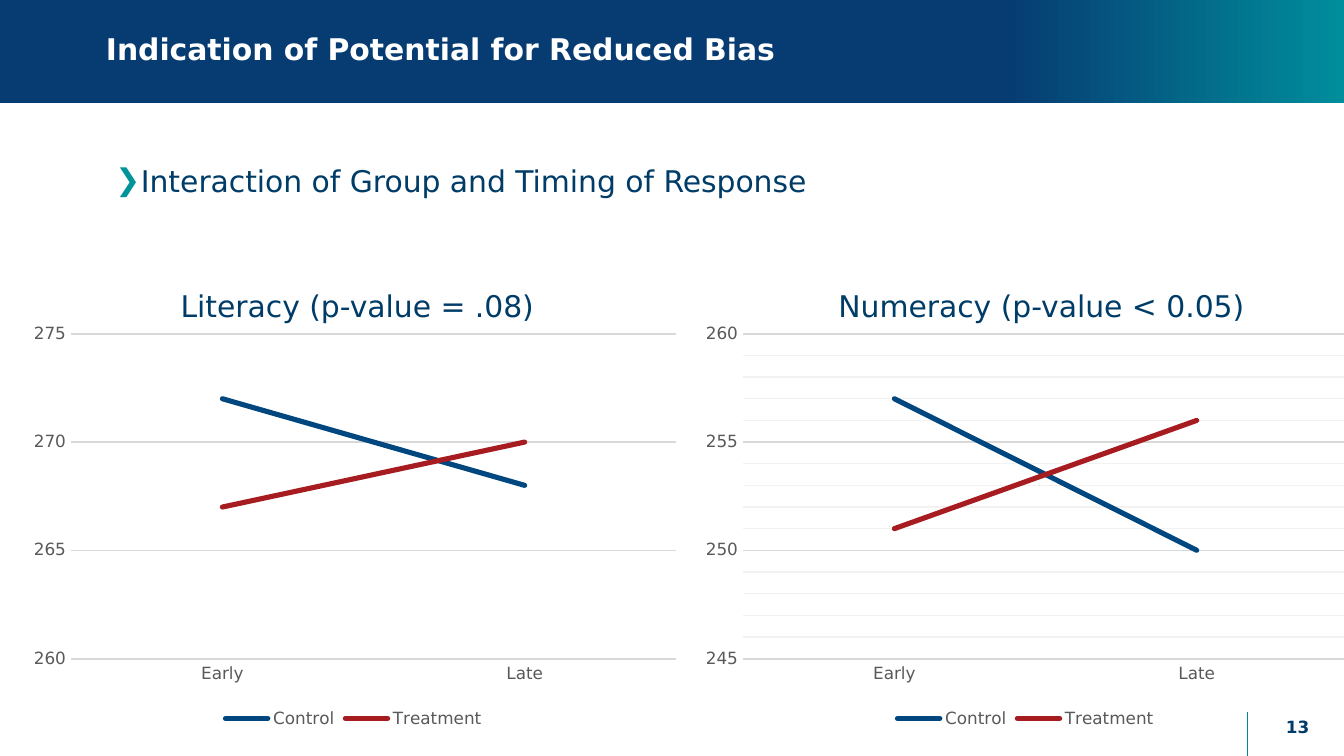
import copy
from dataclasses import dataclass

import pptx
import pptx.chart.data
import pptx.dml.color
import pptx.enum.chart
import pptx.enum.shapes
import pptx.enum.text
import pptx.oxml
import pptx.oxml.ns
import pptx.util

FONT = "DejaVu Sans"
COLOURS = {
    "navy": "073C72", "teal": "008D9C", "divider": "008799", "bullet": "009399",
    "text": "003C68", "white": "FFFFFF", "label": "595959",
    "grid": "D9D9D9", "minor": "F2F2F2", "Control": "00467F", "Treatment": "A71C20",
}
ALIGN = pptx.enum.text.PP_ALIGN
ANCHOR = pptx.enum.text.MSO_ANCHOR
NAMESPACE = pptx.oxml.ns.nsdecls("a")

deck = pptx.Presentation()
deck.slide_width = pptx.util.Inches(10)
deck.slide_height = deck.slide_width * 9 // 16
page = deck.slides.add_slide(deck.slide_layouts[6])


@dataclass
class Area:
    """A place on the page, in percent of its width and height."""
    left: float
    top: float
    width: float
    height: float

    def lengths(self) -> tuple[int, int, int, int]:
        across, down = deck.slide_width / 100, deck.slide_height / 100
        return (round(self.left * across), round(self.top * down),
                round(self.width * across), round(self.height * down))


@dataclass
class Label:
    text: str
    area: Area
    size: float = 16
    colour: str = "text"
    bold: bool = False
    align: ALIGN = ALIGN.LEFT
    anchor: ANCHOR = ANCHOR.TOP
    spacing: float | pptx.util.Pt = 1.0
    bullet: str = ""


@dataclass
class Panel:
    title: str
    left: float
    title_left: float
    low: int
    high: int
    control: tuple[int, int]
    treatment: tuple[int, int]
    minor_grid: bool = False


def rgb(name: str) -> pptx.dml.color.RGBColor:
    return pptx.dml.color.RGBColor.from_string(COLOURS[name])


def style_font(font, size: float, colour: str, bold: bool = False) -> None:
    font.name, font.size, font.bold = FONT, pptx.util.Pt(size), bold
    font.color.rgb = rgb(colour)


def style_line(line, colour: str, width: float) -> None:
    line.color.rgb = rgb(colour)
    line.width = pptx.util.Pt(width)


def add_label(label: Label) -> None:
    box = page.shapes.add_textbox(*label.area.lengths())
    frame = box.text_frame
    frame.word_wrap = True
    frame.vertical_anchor = label.anchor
    para = frame.paragraphs[0]
    if label.bullet:
        properties = para._p.get_or_add_pPr()
        properties.set("marL", str(pptx.util.Inches(0.26)))
        properties.set("indent", str(pptx.util.Inches(-0.19)))
        for xml in (
            f'<a:buClr {NAMESPACE}><a:srgbClr val="{COLOURS["bullet"]}"/></a:buClr>',
            f'<a:buFont {NAMESPACE} typeface="{FONT}"/>',
            f'<a:buChar {NAMESPACE} char="{label.bullet}"/>',
        ):
            properties.append(pptx.oxml.parse_xml(xml))
    para.alignment = label.align
    para.line_spacing = label.spacing
    span = para.add_run()
    span.text = label.text
    style_font(span.font, label.size, label.colour, label.bold)


def add_banner(area: Area) -> None:
    banner = page.shapes.add_shape(
        pptx.enum.shapes.MSO_SHAPE.RECTANGLE, *area.lengths())
    banner.shadow.inherit = False
    banner.line.fill.background()
    banner.fill.gradient()
    banner.fill.gradient_angle = 0
    first, last = banner.fill.gradient_stops
    first.color.rgb, last.color.rgb = rgb("navy"), rgb("teal")
    # Hold the navy for three quarters of the width
    stop = banner._element.spPr.find(".//" + pptx.oxml.ns.qn("a:gs"))
    middle = copy.deepcopy(stop)
    middle.set("pos", "75000")
    stop.addnext(middle)


def add_divider(column: float, row: float) -> None:
    left, top, _, height = Area(column, row, 0, 100 - row).lengths()
    divider = page.shapes.add_connector(
        pptx.enum.shapes.MSO_CONNECTOR.STRAIGHT, left, top, left, top + height)
    style_line(divider.line, "divider", 0.75)
    divider._element.spPr.append(
        pptx.oxml.parse_xml(f"<a:effectLst {NAMESPACE}/>"))


def set_plot_area(chart, x: float, y: float, w: float, h: float) -> None:
    settings = "".join(f'<c:{key} val="{value}"/>' for key, value in (
        ("layoutTarget", "inner"), ("xMode", "edge"), ("yMode", "edge"),
        ("x", x), ("y", y), ("w", w), ("h", h)))
    plot_area = chart._chartSpace.chart.plotArea
    for layout in plot_area.findall(pptx.oxml.ns.qn("c:layout")):
        plot_area.remove(layout)
    plot_area.insert(0, pptx.oxml.parse_xml(
        f'<c:layout {pptx.oxml.ns.nsdecls("c")}>'
        f"<c:manualLayout>{settings}</c:manualLayout></c:layout>"))


def add_minor_grid(axis) -> None:
    axis.minor_unit = 1
    axis.has_minor_gridlines = True
    gridlines = axis._element.find(pptx.oxml.ns.qn("c:minorGridlines"))
    gridlines.append(pptx.oxml.parse_xml(
        f'<c:spPr {pptx.oxml.ns.nsdecls("c", "a")}>'
        f'<a:ln w="{pptx.util.Pt(0.75)}"><a:solidFill>'
        f'<a:srgbClr val="{COLOURS["minor"]}"/></a:solidFill></a:ln></c:spPr>'))


def add_panel(panel: Panel) -> None:
    data = pptx.chart.data.CategoryChartData(number_format="0")
    data.categories = ["Early", "Late"]
    data.add_series("Control", panel.control)
    data.add_series("Treatment", panel.treatment)
    chart = page.shapes.add_chart(
        pptx.enum.chart.XL_CHART_TYPE.LINE,
        *Area(panel.left, 41.96, 50, 55.1).lengths(), data).chart
    style_font(chart.font, 9, "label")
    chart.has_title = False
    set_plot_area(chart, 0.08, 0.04, 0.9, 0.78)

    # Legend
    chart.has_legend = True
    chart.legend.position = pptx.enum.chart.XL_LEGEND_POSITION.BOTTOM
    chart.legend.include_in_layout = False
    style_font(chart.legend.font, 9, "label")

    # Axes
    for axis in (chart.category_axis, chart.value_axis):
        axis.major_tick_mark = pptx.enum.chart.XL_TICK_MARK.NONE
        axis.minor_tick_mark = pptx.enum.chart.XL_TICK_MARK.NONE
        style_font(axis.tick_labels.font, 9, "label")
    style_line(chart.category_axis.format.line, "grid", 1)
    values = chart.value_axis
    values.minimum_scale, values.maximum_scale = panel.low, panel.high
    values.major_unit = 5
    values.format.line.fill.background()
    style_line(values.major_gridlines.format.line, "grid", 0.75)
    if panel.minor_grid:
        add_minor_grid(values)

    # Series
    chart.plots[0].vary_by_categories = False
    for series in chart.plots[0].series:
        series.smooth = False
        style_line(series.format.line, series.name, 2.75)
        series.format.line._ln.set("cap", "rnd")

    add_label(Label(panel.title, Area(panel.title_left, 37, 40, 6.5),
                    align=ALIGN.CENTER, spacing=pptx.util.Pt(20)))


# Banner and page furniture
add_banner(Area(0, 0, 100, 13.7))
add_divider(92.8, 94.2)
add_label(Label("Indication of Potential for Reduced Bias", Area(6.9, 0, 81.5, 13.5),
                colour="white", bold=True, anchor=ANCHOR.MIDDLE, spacing=0.9))
add_label(Label("13", Area(93.1, 93.5, 6.9, 5.3), size=9, bold=True,
                align=ALIGN.CENTER, anchor=ANCHOR.MIDDLE))

# Statement
add_label(Label("Interaction of Group and Timing of Response",
                Area(6.9, 20.44, 90.4, 6.5), spacing=pptx.util.Pt(20), bullet="❯"))

# Charts side by side
for panel in (
    Panel("Literacy (p-value = .08)", 1.3, 6.6, 260, 275, (272, 268), (267, 270)),
    Panel("Numeracy (p-value < 0.05)", 51.3, 57.5, 245, 260, (257, 250), (251, 256),
          minor_grid=True),
):
    add_panel(panel)

deck.save("out.pptx")
